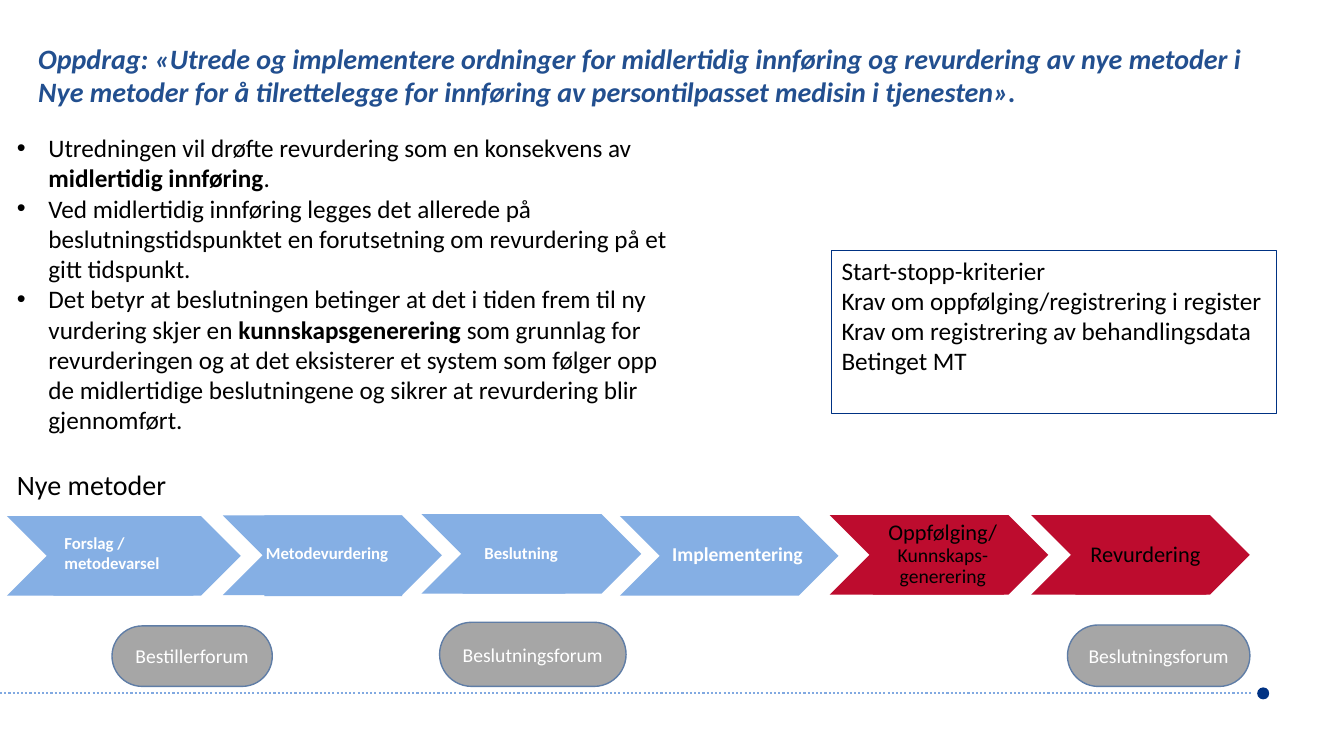
from lxml import etree
from pptx import Presentation
from pptx import util as u
from pptx.dml.color import RGBColor
from pptx.enum import dml, shapes, text
from pptx.oxml import ns

HUES = {"blue": "85AFE4", "red": "BD0C2E", "gray": "A6A6A6", "edge": "5F7DA6",
        "navy": "003283", "title": "224F8F", "dots": "81A9E1",
        "white": "FFFFFF", "black": "000000"}
KIND = shapes.MSO_SHAPE


def hue(name):
    return RGBColor.from_string(HUES[name])


def write(frame, paras, size=18, color="black", bold=False, italic=False,
          center=False, middle=False, wrap=True, bullet=False, space=None,
          inset=(7.2, 3.6, 7.2, 3.6)):
    frame.word_wrap = wrap
    frame.vertical_anchor = text.MSO_ANCHOR.MIDDLE if middle else text.MSO_ANCHOR.TOP
    frame.margin_left, frame.margin_top, frame.margin_right, frame.margin_bottom = map(u.Pt, inset)
    for n, runs in enumerate(paras):
        para = frame.add_paragraph() if n else frame.paragraphs[0]
        if bullet:
            props = para._p.get_or_add_pPr()
            props.set("marL", str(u.Pt(22.5)))
            props.set("indent", str(u.Pt(-22.5)))
            etree.SubElement(props, ns.qn("a:buFont")).set("typeface", "Arial")
            etree.SubElement(props, ns.qn("a:buChar")).set("char", "•")
        para.alignment = text.PP_ALIGN.CENTER if center else text.PP_ALIGN.LEFT
        if space:
            para.line_spacing = space
        for part in [runs] if isinstance(runs, str) else runs:
            words, own = (part, {}) if isinstance(part, str) else part
            run = para.add_run()
            run.text = words
            font = run.font
            font.name = "Calibri"
            font.size = u.Pt(own.get("size", size))
            font.bold = own.get("bold", bold)
            font.italic = italic
            font.color.rgb = hue(color)


class Board:
    """Draws styled elements on one slide, with lengths in points."""

    def __init__(self, slide):
        self.items = slide.shapes

    def shape(self, kind, box, fill=None, line=None, width=1, adj=None):
        item = self.items.add_shape(kind, *map(u.Pt, box))
        item.shadow.inherit = False
        if fill:
            item.fill.solid()
            item.fill.fore_color.rgb = hue(fill)
        else:
            item.fill.background()
        if line:
            item.line.color.rgb = hue(line)
            item.line.width = u.Pt(width)
        else:
            item.line.fill.background()
        if adj:
            item.adjustments[0] = adj
        return item

    def label(self, box, paras, **style):
        write(self.items.add_textbox(*map(u.Pt, box)).text_frame, paras, **style)

    def pill(self, box, words):
        item = self.shape(KIND.ROUNDED_RECTANGLE, box, "gray", "edge", adj=0.5)
        write(item.text_frame, [words], size=14, color="white", center=True, middle=True)

    def step(self, box, fill, core=None, paras=()):
        self.shape(KIND.CHEVRON, box, fill)
        if core:
            item = self.shape(KIND.RECTANGLE, core, fill)
            if paras:
                write(item.text_frame, paras, size=16, center=True, middle=True,
                      space=0.9, inset=(10, 3.6, 3.6, 3.6))

    def dots(self, x, y, end):
        rule = self.items.add_connector(shapes.MSO_CONNECTOR.STRAIGHT,
                                        u.Pt(x), u.Pt(y), u.Pt(end), u.Pt(y))
        rule.line.color.rgb = hue("dots")
        rule.line.width = u.Pt(1.5)
        rule.line.dash_style = dml.MSO_LINE.ROUND_DOT
        etree.SubElement(rule._element.spPr, ns.qn("a:effectLst"))


def main():
    deck = Presentation()
    deck.slide_width, deck.slide_height = u.Pt(960), u.Pt(540)
    board = Board(deck.slides.add_slide(deck.slide_layouts[6]))
    board.dots(0, 495.2, 894.2)
    board.shape(KIND.OVAL, (898, 491, 8.6, 8.6), "navy")

    steps = [
        ((5, 368.6, 167, 56.9), "blue", (38.2, 368.6, 100, 56.9)),
        ((159.1, 368.2, 156.5, 56.9), "blue", (188.8, 368.2, 98.6, 57.6)),
        ((301, 367.2, 157, 56.9), "blue", (330.5, 367.2, 73.4, 56.9)),
        ((442.8, 368.6, 156.2, 56.9), "blue"),
        ((592.6, 367.9, 156.2, 56.9), "red", (623.5, 367.9, 93.6, 56.9),
         [["Oppfølging/", ("Kunnskaps-generering", {"size": 14})]]),
        ((736.6, 367.9, 156.2, 56.9), "red", (768.2, 367.9, 93.6, 56.9), ["Revurdering"]),
    ]
    for step in steps:
        board.step(*step)

    names = [
        ((38.9, 376.8, 82.8, 36), ["Forslag /", "metodevarsel"], 12, False),
        ((182.9, 384.5, 103, 21.6), ["Metodevurdering"], 12, False),
        ((338.9, 384.1, 67.7, 21.6), ["Beslutning"], 12, False),
        ((473, 383.8, 121, 24.5), ["Implementering"], 14, True),
    ]
    for box, paras, size, wrap in names:
        board.label(box, paras, size=size, color="white", bold=True, wrap=wrap)

    board.pill((80, 447.1, 114.5, 43.2), "Bestillerforum")
    board.pill((314, 444.5, 133.2, 45.8), "Beslutningsforum")
    board.pill((762.5, 446.4, 130.3, 43.9), "Beslutningsforum")

    strong = {"bold": True}
    board.label((5, 91.1, 481, 247), [
        ["Utredningen vil drøfte revurdering som en konsekvens av ",
         ("midlertidig innføring", strong), "."],
        "Ved midlertidig innføring legges det allerede på beslutningstidspunktet "
        "en forutsetning om revurdering på et gitt tidspunkt.",
        ["Det betyr at beslutningen betinger at det i tiden frem til ny vurdering skjer en ",
         ("kunnskapsgenerering", strong),
         " som grunnlag for revurderingen og at det eksisterer et system som følger opp "
         "de midlertidige beslutningene og sikrer at revurdering blir gjennomført."],
    ], bullet=True)
    board.label((5, 330.5, 143.3, 31.7), ["Nye metoder"], size=20)

    needs = board.shape(KIND.RECTANGLE, (594, 178.6, 317.5, 116.6), line="navy", width=0.75)
    write(needs.text_frame, [
        "Start-stopp-kriterier", "Krav om oppfølging/registrering i register",
        "Krav om registrering av behandlingsdata", "Betinget MT"])
    board.label((20.2, 25.9, 905, 55.4), [
        "Oppdrag: «Utrede og implementere ordninger for midlertidig innføring og revurdering "
        "av nye metoder i Nye metoder for å tilrettelegge for innføring av persontilpasset "
        "medisin i tjenesten»."], size=20, color="title", bold=True, italic=True)
    deck.save("out.pptx")


if __name__ == "__main__":
    main()
